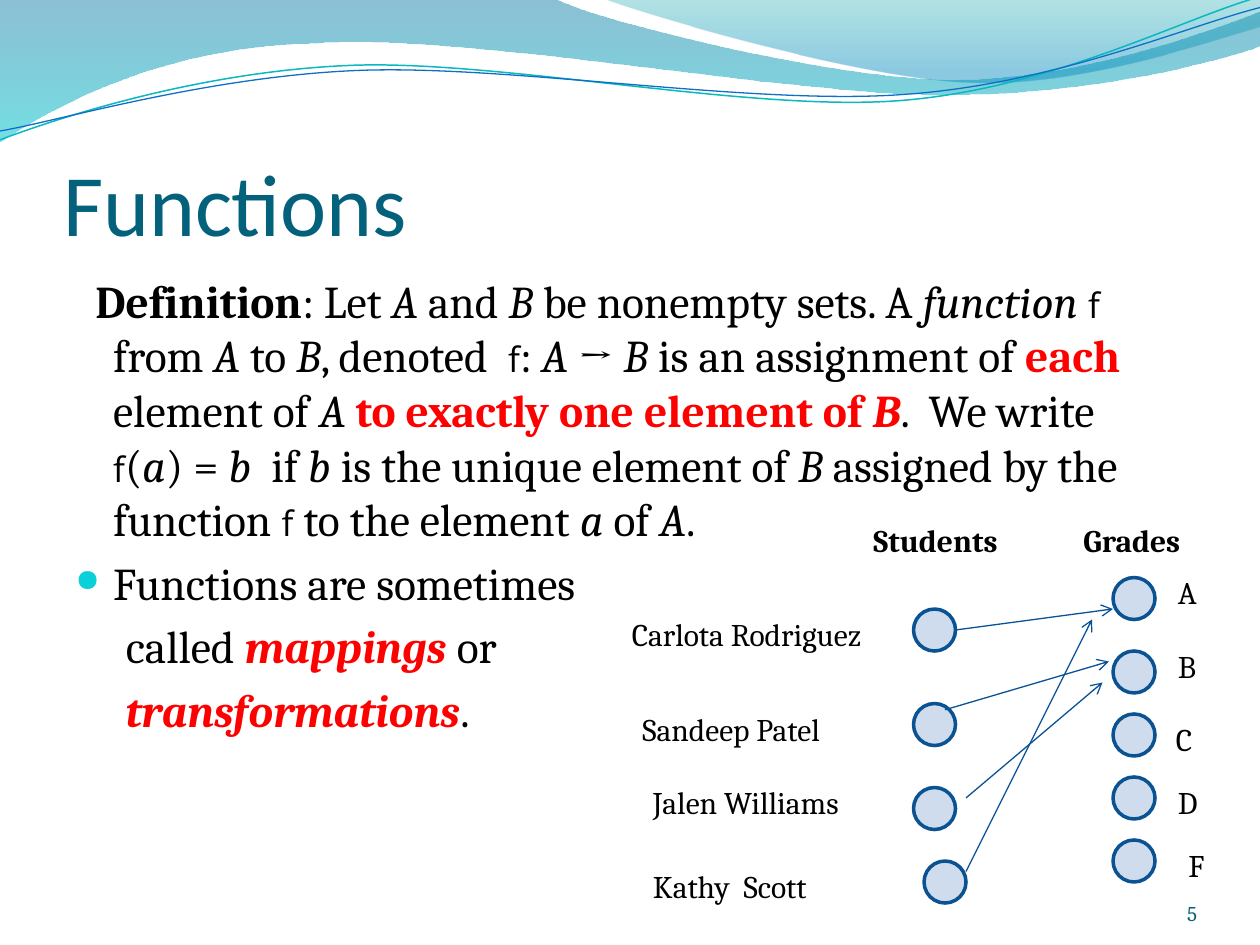
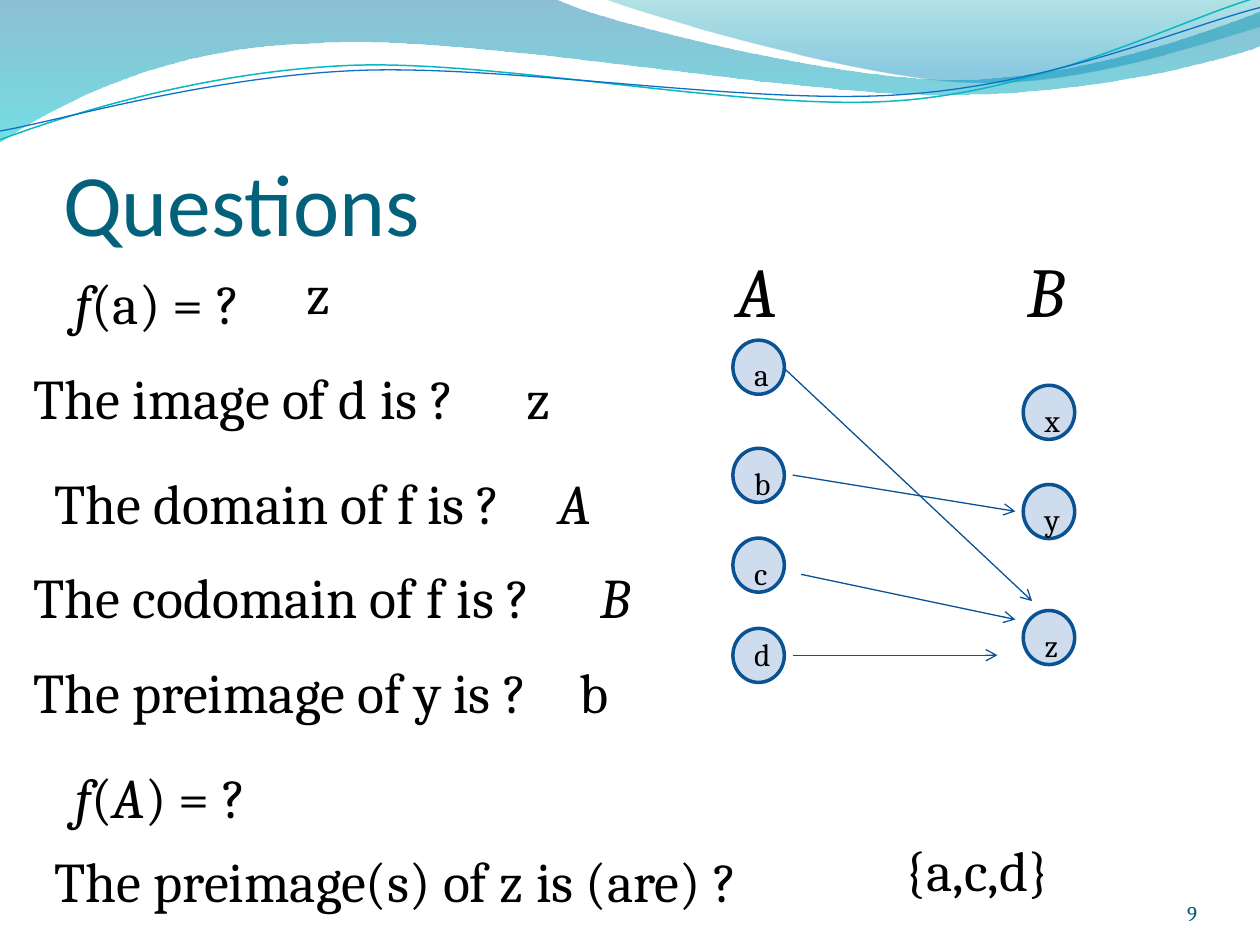
"""Build two lecture slides on functions, sharing one wave-topped layout."""
from lxml.etree import SubElement
from pptx import Presentation
from pptx.dml.color import RGBColor
from pptx.enum.shapes import MSO_CONNECTOR, MSO_SHAPE
from pptx.enum.text import MSO_ANCHOR, MSO_AUTO_SIZE, PP_ALIGN
from pptx.oxml.ns import qn
from pptx.util import Inches, Pt

hue = RGBColor.from_string
CELL = Inches(10) / 120
BLACK, RED, TEAL, NAVY = "000000", "FF0000", "04617B", "095295"
HIGH = {18: 4.8, 32: 7.7, 40: 9.2}


def grid(*cells):
    return [round(cell * CELL) for cell in cells]


def put(par, runs, size, tint=BLACK, font="Cambria"):
    for text, style in runs:
        run = par.add_run()
        run.text = text
        face = run.font
        face.name = "Open Sans" if "f" in style else font
        face.size = Pt(20 if "f" in style else size)
        face.bold, face.italic = "b" in style, "i" in style
        face.color.rgb = hue(RED if "r" in style else tint)


WAVES = [
    ([(0, 0), (4.4, -0.01), (4.76, 0.17, 6.64, 0.63, 7.58, 0.63),
      (8.53, 0.63, 9.58, 0.26, 10, 0.09), (10.01, 0.36),
      (9.83, 0.44, 8.7, 0.76, 7.46, 0.75), (6.22, 0.75, 3.82, 0.28, 2.57, 0.34),
      (1.29, 0.36, 0.46, 0.83, -0.01, 1.13), (0, 0)],
     [(0, "0074A1", 45), (1, "00C6CF", 55)], None),
    ([(4.79, -0.01), (5.09, 0.11, 6.82, 0.62, 7.69, 0.65),
      (8.56, 0.69, 9.61, 0.32, 10, 0.21), (10, 0), (4.79, -0.01)],
     [(0, "00A1A9", 30), (0.8, "008BBF", 45)], None),
    ([(0, 1.11), (0.48, 0.93, 1.58, 0.57, 2.77, 0.52),
      (3.95, 0.47, 5.93, 0.89, 7.13, 0.8), (8.33, 0.71, 9.38, 0.15, 9.98, -0.02)],
     None, ("0AB8BF", 0.85)),
    ([(0, 1.04), (0.47, 0.96, 1.64, 0.61, 2.83, 0.56),
      (4.03, 0.51, 5.97, 0.84, 7.17, 0.75), (8.36, 0.67, 9.41, 0.21, 10, 0.06)],
     None, ("0F6FC6", 0.75)),
]

PAGES = [
    dict(
        title="Functions", page="5", dot=(4, 4),
        dots=[(87, 58), (87, 67), (87, 75), (88, 82)]
        + [(106, top) for top in (55, 62, 68, 74, 80)],
        notes=[
            (111, 54, 2.6, 18, [("A", "")]), (111, 61, 2.6, 18, [("B", "")]),
            (112, 68, 1, 18, [("C", "")]), (111, 74, 2.6, 18, [("D", "")]),
            (112, 80, 3, 18, [("F", "")]),
            (82, 49, 21, 18, [("Students", "b")]),
            (102, 49, 14, 18, [("Grades", "b")]),
            (59, 58, 31, 18, [("Carlota Rodriguez", "")]),
            (60, 67, 26, 18, [("Sandeep Patel", "")]),
            (61, 74, 31, 18, [("Jalen Williams", "")]),
            (61, 82, 22, 18, [("Kathy  Scott", "")])],
        links=[(91, 60, 106, 58), (92, 76, 105, 65),
               (90, 67.6, 105.6, 63), (92, 83, 104, 59)]),
    dict(
        title="Questions", page="9", dot=(4.9, 5.15),
        dots=[(69.8, top) for top in (32.4, 42.7, 51.25, 59.85)]
        + [(97.45, top) for top in (36.7, 46.15, 58.15)],
        notes=[(70.65, top, 3.2, 18, [(name, "")]) for name, top in
               zip("abcd", (33.25, 43.6, 52.2, 59.9))]
        + [(98.3, top, 3.2, 18, [(name, "")]) for name, top in
           zip("xyz", (37.6, 47, 59))]
        + [
            (69, 23, 7.3, 40, [("A", "i")]), (96.7, 23, 7.3, 40, [("B", "i")]),
            (6, 25, 51, 32, [("f", "i"), ("(a) = ?", "")]),
            (28, 24, 38, 32, [("z", "")]),
            (2, 34, 51, 32, [("The image of d is ?", "")]),
            (49, 34, 9, 32, [("z", "")]),
            (4, 44, 51, 32, [("The domain of f is ?", "")]),
            (52, 44, 8, 32, [("A", "i")]),
            (2, 53, 53, 32, [("The codomain of f is ?", "")]),
            (56, 53, 5, 32, [("B", "i")]),
            (2, 62, 54, 32, [("The preimage of y is ?", "")]),
            (54, 62, 6, 32, [("b", "")]),
            (6, 72, 21, 32, [("f", "i"), ("(", ""), ("A", "i"), (") = ?", "")]),
            (85, 79, 35, 32, [("{a,c,d}", "")]),
            (4, 80, 79, 32, [("The preimage(s) of z is (are) ?", "")])],
        links=[(75.5, 45.25, 96.7, 48.7), (74.6, 35, 98.3, 57.25),
               (76.3, 54.7, 96.7, 59), (75.5, 62.4, 95, 62.4)]),
]

BODY = [
    (0.3, -0.14, False, [
        ("Definition", "b"), (": Let ", ""), ("A", "i"), (" and ", ""),
        ("B ", "i"), ("be nonempty sets. A ", ""), ("function ", "i"),
        ("f", "f"), ("  from ", ""), ("A", "i"), (" to ", ""), ("B", "i"),
        (", denoted  ", ""), ("f", "f"), (": ", ""), ("A ", "i"), ("→ ", ""),
        ("B ", "i"), ("is an assignment of ", ""), ("each", "br"),
        (" element of ", ""), ("A ", "i"),
        ("to exactly one element of ", "br"), ("B", "bir"),
        (".  We write  ", ""), ("f", "f"), ("(", ""), ("a", "i"), (") = ", ""),
        ("b  ", "i"), ("if ", ""), ("b", "i"),
        (" is the unique element of ", ""), ("B", "i"),
        (" assigned by the function ", ""), ("f", "f"),
        (" to the element ", ""), ("a", "i"), (" of ", ""), ("A", "i"),
        (".", "")]),
    (0.3, -0.3, True, [("Functions are sometimes", "")]),
    (0.4, 0, False, [("called ", ""), ("mappings", "bir"), (" or", "")]),
    (0.4, 0, False, [("transformations", "bir"), (".", "")]),
]

deck = Presentation()
deck.slide_width, deck.slide_height = grid(120, 90)
base = deck.slide_layouts[5]
for hold in list(base.placeholders)[1:]:
    hold.element.getparent().remove(hold.element)
slides = [deck.slides.add_slide(base) for page in PAGES]

waves = []
for path, stops, edge in WAVES:
    spots = [(Inches(part[at]), Inches(part[at + 1]))
             for part in path for at in range(0, len(part), 2)]
    pen = slides[0].shapes.build_freeform(*spots[0], scale=1.0)
    pen.add_line_segments(spots[1:], close=bool(stops))
    wave = pen.convert_to_shape()
    lines = wave.element.iter(qn("a:lnTo"))
    lines = iter(list(lines))
    for part in path[1:]:
        line = next(lines)
        if len(part) == 6:
            line.addprevious(curve := line.makeelement(qn("a:cubicBezTo")))
            for bend in (line, next(lines), next(lines)):
                curve.append(bend[0])
                bend.getparent().remove(bend)
    wave.shadow.inherit = False
    if stops:
        wave.fill.gradient()
        wave.fill.gradient_angle = 270
        for stop, (place, tint, _) in zip(wave.fill.gradient_stops, stops):
            stop.position = place
            stop.color.rgb = hue(tint)
        for tone, (_, _, alpha) in zip(wave.element.iter(qn("a:srgbClr")), stops):
            SubElement(tone, qn("a:alpha"), val=str(alpha * 1000))
        wave.line.fill.background()
    else:
        wave.fill.background()
        wave.line.color.rgb = hue(edge[0])
        wave.line.width = Pt(edge[1])
    waves.append(wave)
for wave in waves:
    base.shapes.element.append(wave.element)

box = slides[0].shapes.add_textbox(*grid(6, 25.4, 107, 57.6))
frame = box.text_frame
frame.word_wrap = True
for row, (left, first, mark, runs) in enumerate(BODY):
    par = frame.add_paragraph() if row else frame.paragraphs[0]
    par.space_before = Pt(5.2)
    put(par, runs, 26)
    props = par._p.get_or_add_pPr()
    props.set("marL", str(Inches(left)))
    props.set("indent", str(Inches(first)))
    if mark:
        SubElement(SubElement(props, qn("a:buClr")), qn("a:srgbClr"), val="0BD0D9")
        SubElement(props, qn("a:buSzPct"), val="68000")
        SubElement(props, qn("a:buChar"), char="●")

for slide, page in zip(slides, PAGES):
    shapes = slide.shapes
    title = shapes.title
    title.left, title.top, title.width, title.height = grid(6, 9.2, 108, 15)
    frame = title.text_frame
    frame.auto_size = MSO_AUTO_SIZE.NONE
    frame.vertical_anchor = MSO_ANCHOR.BOTTOM
    frame.margin_left = frame.margin_right = frame.margin_bottom = 0
    frame.paragraphs[0].alignment = PP_ALIGN.LEFT
    put(frame.paragraphs[0], [(page["title"], "")], 50, TEAL, "Calibri")

    for spot in page["dots"]:
        dot = shapes.add_shape(MSO_SHAPE.FLOWCHART_CONNECTOR, *grid(*spot, *page["dot"]))
        dot.shadow.inherit = False
        dot.fill.solid()
        dot.fill.fore_color.rgb = hue("4F81BD")
        for tone in dot.element.iter(qn("a:srgbClr")):
            SubElement(tone, qn("a:alpha"), val="27000")
        dot.line.color.rgb = hue("0B5292")
        dot.line.width = Pt(2)

    for left, top, wide, size, runs in page["notes"]:
        frame = shapes.add_textbox(*grid(left, top, wide, HIGH[size])).text_frame
        frame.word_wrap = True
        put(frame.paragraphs[0], runs, size)

    for ends in page["links"]:
        link = shapes.add_connector(MSO_CONNECTOR.STRAIGHT, *grid(*ends))
        link.line.color.rgb = hue(NAVY)
        link.line.width = Pt(0.75)
        SubElement(link.line._get_or_add_ln(), qn("a:tailEnd"), type="arrow")
        SubElement(link.element.spPr, qn("a:effectLst"))

    frame = shapes.add_textbox(*grid(104, 83.4, 10, 4.8)).text_frame
    frame.word_wrap = True
    frame.vertical_anchor = MSO_ANCHOR.BOTTOM
    frame.margin_left = frame.margin_right = frame.margin_top = frame.margin_bottom = 0
    frame.paragraphs[0].alignment = PP_ALIGN.RIGHT
    put(frame.paragraphs[0], [(page["page"], "")], 12, "045D75")

deck.save("out.pptx")
